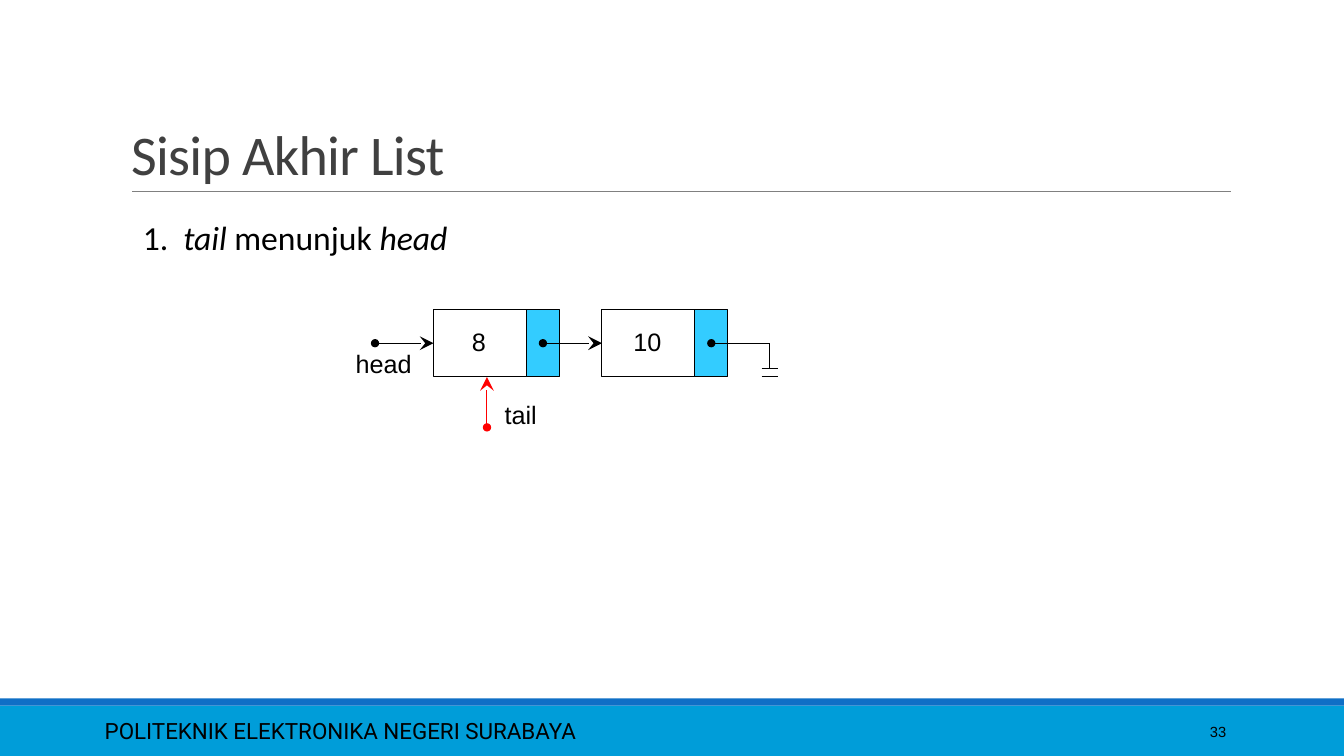
from lxml import etree
from pptx import Presentation, util as u
from pptx.dml.color import RGBColor
from pptx.enum import shapes, text
from pptx.oxml import ns

HUES = {"ink": "000000", "title": "404040", "rule": "808080", "bar": "009DD9",
        "edge": "0F6FC6", "link": "33CCFF", "tail": "FF0000"}
CELL, SLOT, HIGH = 0.92, 0.33, 0.67  # data cell, pointer slot, node height
STEP = 1.67  # from one node to the next
LEFT, CENTER, RIGHT = text.PP_ALIGN.LEFT, text.PP_ALIGN.CENTER, text.PP_ALIGN.RIGHT


def hue(name):
    return RGBColor.from_string(HUES[name])


def style(font, name, size, color="ink"):
    font.name, font.size = name, u.Pt(size)
    font.color.rgb = hue(color)


def label(slide, box, runs, font="Arial", size=18, align=CENTER, middle=False):
    """Add a text box; runs are (words, italic) pairs."""
    frame = slide.shapes.add_textbox(*map(u.Inches, box)).text_frame
    frame.word_wrap = True
    if middle:
        frame.vertical_anchor = text.MSO_ANCHOR.MIDDLE
    para = frame.paragraphs[0]
    para.alignment = align
    for words, slant in runs:
        run = para.add_run()
        run.text = words
        style(run.font, font, size)
        run.font.italic = slant
    return para


def rect(slide, box, fill=None, line=None):
    shape = slide.shapes.add_shape(shapes.MSO_SHAPE.RECTANGLE, *map(u.Inches, box))
    shape.shadow.inherit = False
    if fill:
        shape.fill.solid()
        shape.fill.fore_color.rgb = hue(fill)
    else:
        shape.fill.background()
    if line:
        shape.line.color.rgb = hue(line)
        shape.line.width = u.Pt(0.75)
    else:
        shape.line.fill.background()
    return shape


def wire(slide, start, end, color="ink", width=0.75, dot=False, arrow=False):
    """Draw a line, with a dot at its start and an arrow at its end if asked."""
    line = slide.shapes.add_connector(
        shapes.MSO_CONNECTOR.STRAIGHT, *map(u.Inches, (*start, *end)))
    line.line.color.rgb = hue(color)
    line.line.width = u.Pt(width)
    etree.SubElement(line._element.spPr, ns.qn("a:effectLst"))
    edge = line.line._get_or_add_ln()
    if dot:
        etree.SubElement(edge, ns.qn("a:headEnd"), type="oval")
    if arrow:
        etree.SubElement(edge, ns.qn("a:tailEnd"), type="stealth", w="lg", len="lg")
    return line


def footer(slide, x, y, w, h):
    rect(slide, (x, y + 0.07, w, h - 0.07), "bar")
    rect(slide, (x, y, w, 0.07), "edge")
    label(slide, (x + 0.94, y + 0.12, 8.41, 0.4),
          [("POLITEKNIK ELEKTRONIKA NEGERI SURABAYA", False)],
          "Roboto", 16, LEFT, True)
    label(slide, (x + 10.83, y + 0.13, 1.43, 0.4), [("33", False)],
          size=10.5, align=RIGHT, middle=True)


def heading(slide, x, y, w, h):
    title = slide.shapes.title
    title.left, title.top, title.width, title.height = map(u.Inches, (x, y, w, h))
    frame = title.text_frame
    frame.vertical_anchor = text.MSO_ANCHOR.BOTTOM
    para = frame.paragraphs[0]
    para.alignment, para.line_spacing = LEFT, 0.85
    run = para.add_run()
    run.text = "Sisip Akhir List"
    style(run.font, "Calibri", 40, "title")
    run.font._element.set("spc", "-50")
    wire(slide, (x + 0.11, y + h), (x + w + 0.01, y + h), "rule", 0.5)


def point(slide, x, y, w, h):
    para = label(slide, (x, y, w, h),
                 [("1.\t", False), ("tail ", True), ("menunjuk ", False), ("head", True)],
                 "Calibri", 24, LEFT)
    # The tab leads to the hanging indent
    props = para._p.get_or_add_pPr()
    props.set("marL", str(u.Inches(0.4)))
    props.set("indent", str(-u.Inches(0.4)))


def node(slide, x, y, value):
    """Draw one list node and return its data cell."""
    cell = rect(slide, (x, y, CELL, HIGH), line="ink")
    rect(slide, (x + CELL, y, SLOT, HIGH), "link", "ink")
    label(slide, (x + 0.2, y + 0.12, 0.5, 0.4), [(value, False)])
    return cell


def chain(slide, x, y, values):
    mid, low = y + HIGH / 2, y + HIGH
    start = x - 0.58
    label(slide, (x - 1.08, mid, 1.17, 0.4), [("head", False)])

    # Nodes, each reached by an arrow from the one before
    for i, value in enumerate(values):
        left = x + i * STEP
        cell = node(slide, left, y, value)
        arrow = wire(slide, (start, mid), (left, mid), dot=True, arrow=True)
        arrow.end_connect(cell, 1)
        start = left + CELL + SLOT / 2

    # Null end
    end = start + 0.58
    wire(slide, (start, mid), (end, mid), dot=True)
    wire(slide, (end, mid), (end, low - 0.08))
    for level in (low - 0.08, low):
        wire(slide, (end - 0.08, level), (end + 0.08, level))

    # Tail pointer
    label(slide, (x + 0.28, low + 0.17, 1.17, 0.4), [("tail", False)])
    wire(slide, (x + 0.53, low + 0.5), (x + 0.53, low), "tail", dot=True, arrow=True)


def main():
    deck = Presentation()
    deck.slide_width, deck.slide_height = u.Inches(13.33), u.Inches(7.5)
    slide = deck.slides.add_slide(deck.slide_layouts[5])
    footer(slide, 0, 6.93, 13.33, 0.57)
    heading(slide, 1.2, 0.31, 11, 1.59)
    chain(slide, 4.3, 3.07, ["8", "10"])
    point(slide, 1.32, 2.1, 4.67, 0.5)
    deck.save("out.pptx")


if __name__ == "__main__":
    main()
